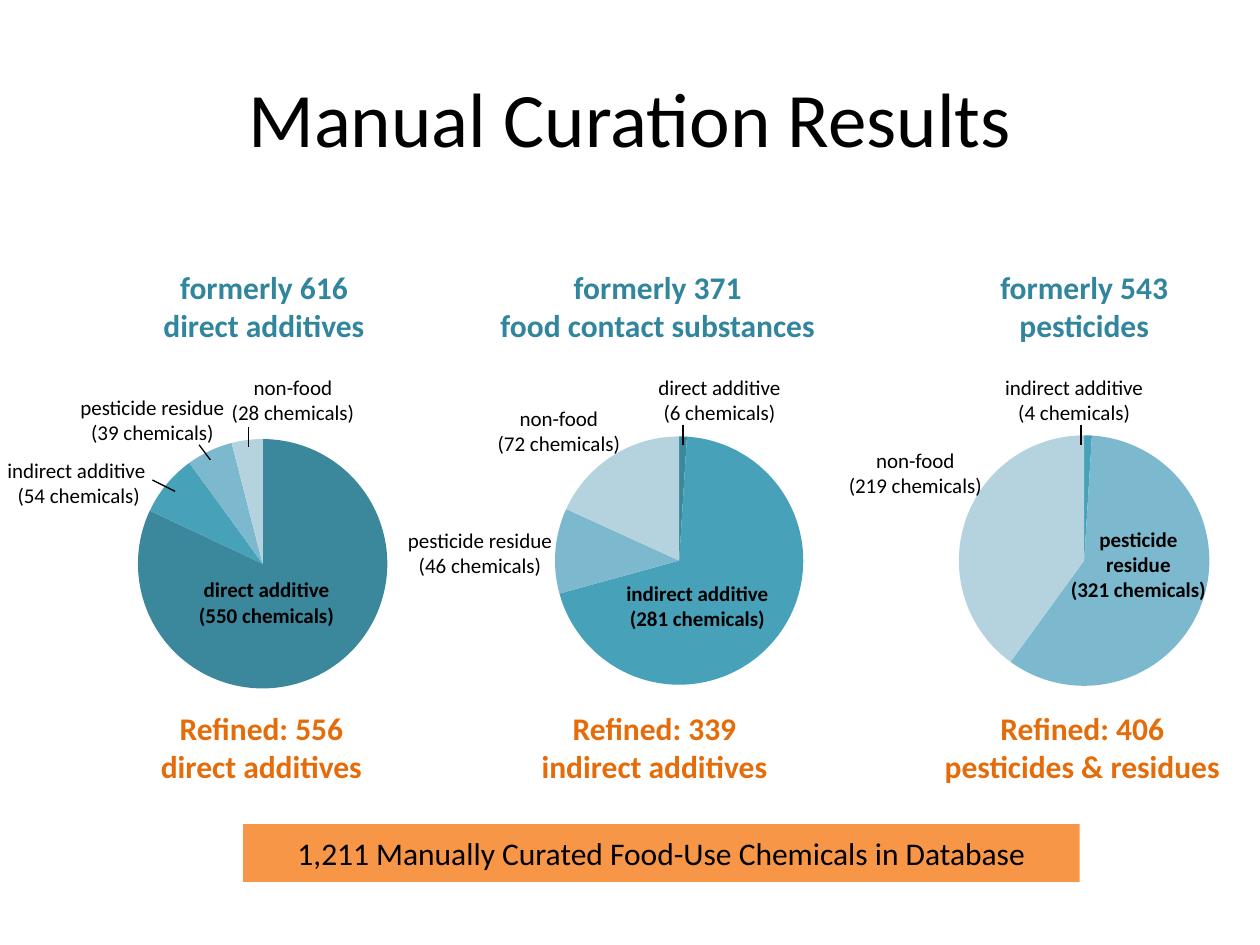
"""Build the slide of manual curation results with three pies."""
import pptx
import pptx.chart.data
import pptx.dml.color
import pptx.enum.chart
import pptx.enum.shapes
import pptx.enum.text
import pptx.oxml
import pptx.util

Inches = pptx.util.Inches
HEX = {
    "black": "000000", "teal": "31859C", "rust": "E46C0A", "amber": "F79646",
    "direct": "3B879B", "indirect": "46A1B9", "residue": "7CB9CF", "other": "B5D3DF",
}
SLICES = ["direct", "indirect", "residue", "other"]


def tint(name):
    return pptx.dml.color.RGBColor.from_string(HEX[name])


def write(shape, text, size=12, color="black", bold=False, wrap=False, anchor="TOP"):
    frame = shape.text_frame
    frame.text = text
    frame.word_wrap = wrap
    frame.vertical_anchor = getattr(pptx.enum.text.MSO_ANCHOR, anchor)
    for para in frame.paragraphs:
        para.alignment = pptx.enum.text.PP_ALIGN.CENTER
        for run in para.runs:
            run.font.name = "Calibri"
            run.font.size = pptx.util.Pt(size)
            run.font.bold = bold
            run.font.color.rgb = tint(color)


deck = pptx.Presentation()
deck.slide_width, deck.slide_height = Inches(10), Inches(7.5)
slide = deck.slides.add_slide(deck.slide_layouts[5])
shapes = slide.shapes

title = shapes.title
title.left, title.top = Inches(0.5), Inches(0.3)
title.width, title.height = Inches(9), Inches(1.25)
write(title, "Manual Curation Results", size=44, wrap=True, anchor="MIDDLE")

pies = [
    (-0.29, 3.35, 4.75, 2.25, (82, 8, 6, 4)),
    (3.02, 3.33, 4.74, 2.24, (1, 69, 11, 18)),
    (6.21, 3.32, 4.79, 2.26, (0, 1, 59, 40)),
]
for left, top, width, height, shares in pies:
    data = pptx.chart.data.CategoryChartData()
    data.categories = ["1", "2", "3", "4"]
    data.add_series("Series 1", shares)
    chart = shapes.add_chart(
        pptx.enum.chart.XL_CHART_TYPE.PIE,
        Inches(left), Inches(top), Inches(width), Inches(height), data).chart
    chart.has_legend = False
    chart.has_title = False
    chart.font.name = "Calibri"
    chart.font.size = pptx.util.Pt(18)
    chart.font.color.rgb = tint("black")
    plot = chart.plots[0]
    plot.vary_by_categories = False
    for index, name in enumerate(SLICES):
        fill = plot.series[0].points[index].format.fill
        fill.solid()
        fill.fore_color.rgb = tint(name)
    high = 0.88
    wide = high * height / width
    area = chart._chartSpace.chart.plotArea
    for old in area.findall(pptx.oxml.ns.qn("c:layout")):
        area.remove(old)
    parts = [("x", (1 - wide) / 2), ("y", (1 - high) / 2), ("w", wide), ("h", high)]
    inner = "".join(f'<c:{key} val="{val:.4f}"/>' for key, val in parts)
    area.insert(0, pptx.oxml.parse_xml(
        f'<c:layout {pptx.oxml.ns.nsdecls("c")}><c:manualLayout>'
        '<c:layoutTarget val="inner"/><c:xMode val="edge"/><c:yMode val="edge"/>'
        f'{inner}</c:manualLayout></c:layout>'))

plain = {}
strong = {"bold": True}
former = {"size": 18, "color": "teal", "bold": True}
refined = {"size": 18, "color": "rust", "bold": True}
labels = [
    (-0.05, 3.58, 1.35, 0.5, "indirect additive \n(54 chemicals)", plain),
    (0.53, 3.08, 1.36, 0.5, "pesticide residue\n(39 chemicals)", plain),
    (1.73, 2.92, 1.19, 0.5, "non-food\n(28 chemicals)", plain),
    (1.47, 4.53, 1.29, 0.5, "direct additive\n(550 chemicals)", strong),
    (5.12, 2.92, 1.18, 0.5, "direct additive\n(6 chemicals)", plain),
    (3.84, 3.17, 1.19, 0.5, "non-food\n(72 chemicals)", plain),
    (3.13, 4.14, 1.36, 0.5, "pesticide residue\n(46 chemicals)", plain),
    (4.86, 4.56, 1.35, 0.5, "indirect additive\n(281 chemicals)", strong),
    (7.87, 2.92, 1.31, 0.5, "indirect additive\n(4 chemicals)", plain),
    (6.63, 3.5, 1.27, 0.5, "non-food\n(219 chemicals)", plain),
    (8.39, 4.13, 1.29, 0.71, "pesticide\nresidue\n(321 chemicals)", strong),
    (1.19, 2.08, 1.81, 0.71, "formerly 616\ndirect additives", former),
    (3.86, 2.08, 2.72, 0.71, "formerly 371\nfood contact substances", former),
    (7.83, 2.08, 1.55, 0.71, "formerly 543\npesticides", former),
    (1.17, 5.58, 1.81, 0.71, "Refined: 556\ndirect additives", refined),
    (4.16, 5.58, 2.07, 0.71, "Refined: 339\nindirect additives", refined),
    (7.39, 5.58, 2.4, 0.71, "Refined: 406\npesticides & residues", refined),
]
for left, top, width, height, text, style in labels:
    box = shapes.add_textbox(Inches(left), Inches(top), Inches(width), Inches(height))
    write(box, text, **style)

leaders = [
    (1.21, 3.81, 1.39, 3.9), (1.58, 3.53, 1.67, 3.65), (1.97, 3.39, 1.97, 3.55),
    (5.42, 3.37, 5.42, 3.53), (8.58, 3.37, 8.58, 3.53),
]
for ends in leaders:
    line = shapes.add_connector(
        pptx.enum.shapes.MSO_CONNECTOR.STRAIGHT, *[Inches(end) for end in ends])
    line.line.color.rgb = tint("black")
    line.line.width = pptx.util.Pt(0.75)
    line._element.spPr.append(pptx.oxml.parse_xml(
        f'<a:effectLst {pptx.oxml.ns.nsdecls("a")}/>'))

banner = shapes.add_shape(
    pptx.enum.shapes.MSO_SHAPE.RECTANGLE,
    Inches(1.93), Inches(6.54), Inches(6.64), Inches(0.46))
banner.shadow.inherit = False
banner.fill.solid()
banner.fill.fore_color.rgb = tint("amber")
banner.line.fill.background()
write(banner, "1,211 Manually Curated Food-Use Chemicals in Database",
      size=18, wrap=True, anchor="MIDDLE")

deck.save("out.pptx")
